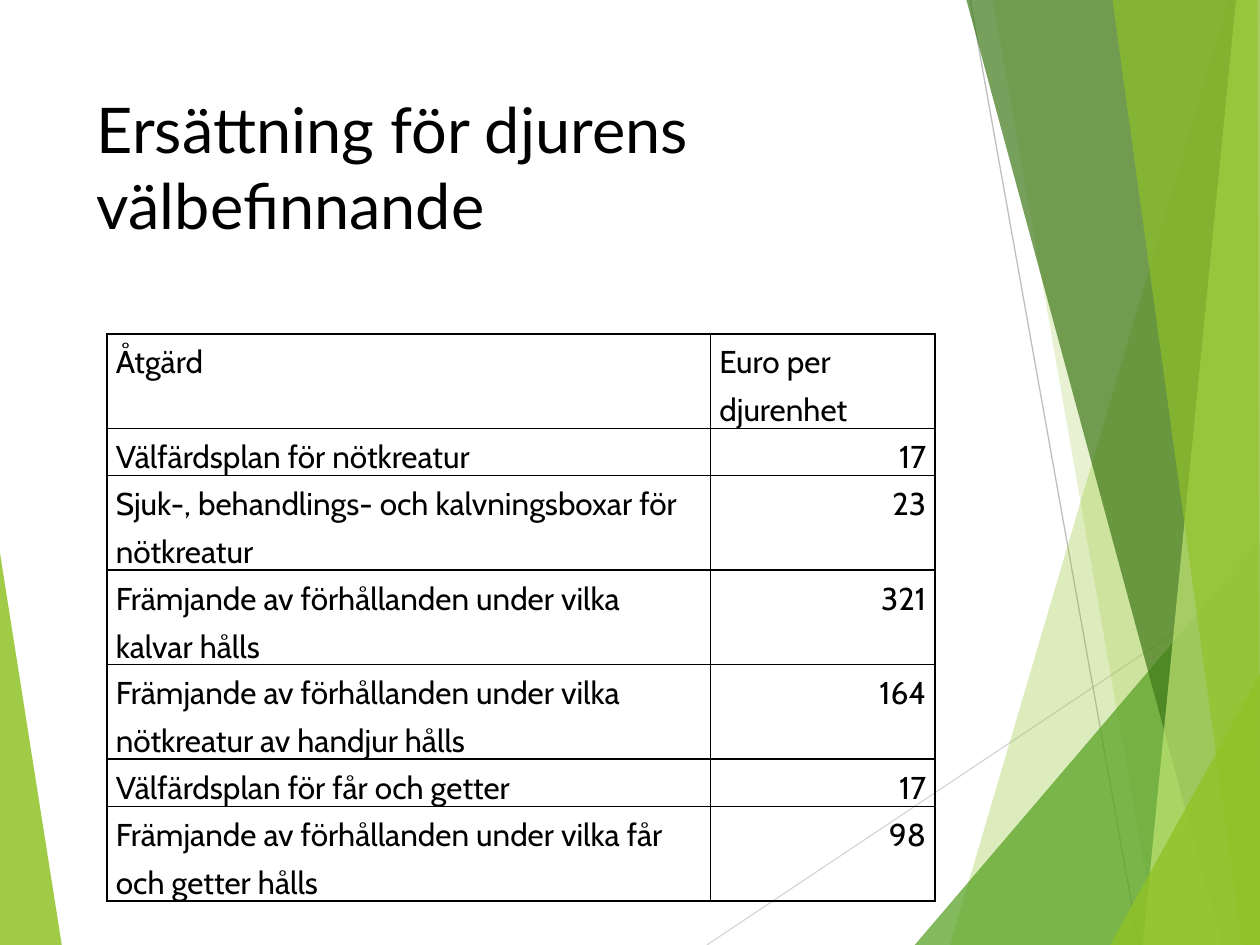
from dataclasses import dataclass

from lxml import etree
from pptx import Presentation
from pptx.dml.color import RGBColor
from pptx.enum.shapes import MSO_CONNECTOR
from pptx.enum.text import MSO_ANCHOR, PP_ALIGN
from pptx.oxml.ns import qn
from pptx.util import Inches, Pt

STRAIGHT = MSO_CONNECTOR.STRAIGHT
TOP = MSO_ANCHOR.TOP
LEFT, RIGHT = PP_ALIGN.LEFT, PP_ALIGN.RIGHT

BLACK = RGBColor(0x00, 0x00, 0x00)
LIME = RGBColor(0x90, 0xC2, 0x26)
PALE_LIME = RGBColor(0xC0, 0xE4, 0x74)
GREEN = RGBColor(0x54, 0xA0, 0x21)
DARK_GREEN = RGBColor(0x3F, 0x78, 0x19)
LIGHT_GREY = RGBColor(0xD9, 0xD9, 0xD9)
GREY = RGBColor(0xBF, 0xBF, 0xBF)

WIDTH, HEIGHT = 10, 7.5
Point = tuple[float, float]


@dataclass
class Facet:
    corners: list[Point]
    color: RGBColor
    opacity: int


@dataclass
class Ray:
    start: Point
    end: Point
    color: RGBColor


@dataclass
class Measure:
    name: str
    euros: str


RAYS = [
    Ray((5.61, HEIGHT), (WIDTH, 4.57), LIGHT_GREY),
    Ray((7.7, 0), (9.04, HEIGHT), GREY),
]
LEFT_FACET = Facet([(0, 4.39), (0.49, HEIGHT), (0, HEIGHT)], LIME, 85)
RIGHT_FACETS = [
    Facet([(9.75, 0), (7.54, HEIGHT), (WIDTH, HEIGHT), (WIDTH, 0)], LIME, 30),
    Facet([(7.88, 0), (9.19, HEIGHT), (WIDTH, HEIGHT), (WIDTH, 0)], LIME, 20),
    Facet([(7.26, HEIGHT), (WIDTH, 4.29), (WIDTH, HEIGHT)], GREEN, 72),
    Facet([(7.67, 0), (9.7, HEIGHT), (WIDTH, HEIGHT), (WIDTH, 0)], DARK_GREEN, 70),
    Facet([(9.81, 0), (9.07, HEIGHT), (WIDTH, HEIGHT), (WIDTH, 0)], PALE_LIME, 70),
    Facet([(8.83, 0), (9.86, HEIGHT), (WIDTH, HEIGHT), (9.98, 0)], LIME, 65),
    Facet([(8.81, HEIGHT), (WIDTH, 5.35), (WIDTH, HEIGHT)], LIME, 80),
]
HEADER = Measure("Åtgärd", "Euro per djurenhet")
MEASURES = [
    Measure("Välfärdsplan för nötkreatur", "17"),
    Measure("Sjuk-, behandlings- och kalvningsboxar för nötkreatur", "23"),
    Measure("Främjande av förhållanden under vilka kalvar hålls", "321"),
    Measure("Främjande av förhållanden under vilka nötkreatur av handjur hålls", "164"),
    Measure("Välfärdsplan för får och getter", "17"),
    Measure("Främjande av förhållanden under vilka får och getter hålls", "98"),
]
COLUMN_WIDTHS = [4.79, 1.78]
ROW_HEIGHT = 0.31


def write_text(frame, text: str, *, font: str, size: float,
               align=LEFT, spacing: float = 1.0) -> None:
    """Put one formatted paragraph into a text frame."""
    frame.word_wrap = True
    paragraph = frame.paragraphs[0]
    paragraph.alignment = align
    paragraph.line_spacing = spacing
    run = paragraph.add_run()
    run.text = text
    run.font.name = font
    run.font.size = Pt(size)
    run.font.color.rgb = BLACK


def draw_facet(slide, facet: Facet) -> None:
    """Draw a translucent polygon without an outline."""
    first, *others = [(Inches(x), Inches(y)) for x, y in facet.corners]
    builder = slide.shapes.build_freeform(*first)
    builder.add_line_segments(others, close=True)
    polygon = builder.convert_to_shape()
    polygon.shadow.inherit = False
    polygon.line.fill.background()
    polygon.fill.solid()
    polygon.fill.fore_color.rgb = facet.color
    tint = polygon.fill._xPr.find(".//" + qn("a:srgbClr"))
    etree.SubElement(tint, qn("a:alpha"), val=str(facet.opacity * 1000))


def draw_ray(slide, ray: Ray) -> None:
    """Draw a thin straight line without a shadow."""
    ends = [Inches(length) for length in ray.start + ray.end]
    connector = slide.shapes.add_connector(STRAIGHT, *ends)
    connector.line.color.rgb = ray.color
    connector.line.width = Pt(0.75)
    etree.SubElement(connector._element.spPr, qn("a:effectLst"))


def border_cell(cell) -> None:
    """Give a cell thin black borders and no fill."""
    properties = cell._tc.get_or_add_tcPr()
    for side in ("lnL", "lnR", "lnT", "lnB"):
        border = etree.SubElement(properties, qn(f"a:{side}"), w=str(Pt(1)))
        fill = etree.SubElement(border, qn("a:solidFill"))
        etree.SubElement(fill, qn("a:srgbClr"), val=str(BLACK))
    cell.fill.background()


def fill_cell(cell, text: str, align) -> None:
    """Write and format one table cell."""
    cell.margin_left = cell.margin_right = Inches(0.07)
    cell.margin_top = cell.margin_bottom = 0
    cell.vertical_anchor = TOP
    write_text(cell.text_frame, text, font="Cabin", size=18, align=align, spacing=1.25)
    border_cell(cell)


def draw_payments(slide) -> None:
    """Draw the table of measures and payments."""
    rows = [HEADER, *MEASURES]
    table = slide.shapes.add_table(
        len(rows), len(COLUMN_WIDTHS), Inches(0.85), Inches(2.65),
        Inches(sum(COLUMN_WIDTHS)), Inches(ROW_HEIGHT * len(rows))).table
    table.first_row = table.horz_banding = False
    for column, width in zip(table.columns, COLUMN_WIDTHS):
        column.width = Inches(width)
    for index, measure in enumerate(rows):
        table.rows[index].height = Inches(ROW_HEIGHT)
        fill_cell(table.cell(index, 0), measure.name, LEFT)
        fill_cell(table.cell(index, 1), measure.euros, RIGHT if index else LEFT)


def main() -> None:
    """Build the slide and save it."""
    presentation = Presentation()
    presentation.slide_width = Inches(WIDTH)
    presentation.slide_height = Inches(HEIGHT)
    slide = presentation.slides.add_slide(presentation.slide_layouts[6])
    draw_facet(slide, LEFT_FACET)
    for ray in RAYS:
        draw_ray(slide, ray)
    for facet in RIGHT_FACETS:
        draw_facet(slide, facet)
    title = slide.shapes.add_textbox(Inches(0.67), Inches(0.67), Inches(6.94), Inches(1.44))
    title.text_frame.vertical_anchor = TOP
    write_text(title.text_frame, "Ersättning för djurens välbefinnande", font="Lato", size=36)
    draw_payments(slide)
    presentation.save("out.pptx")


if __name__ == "__main__":
    main()
